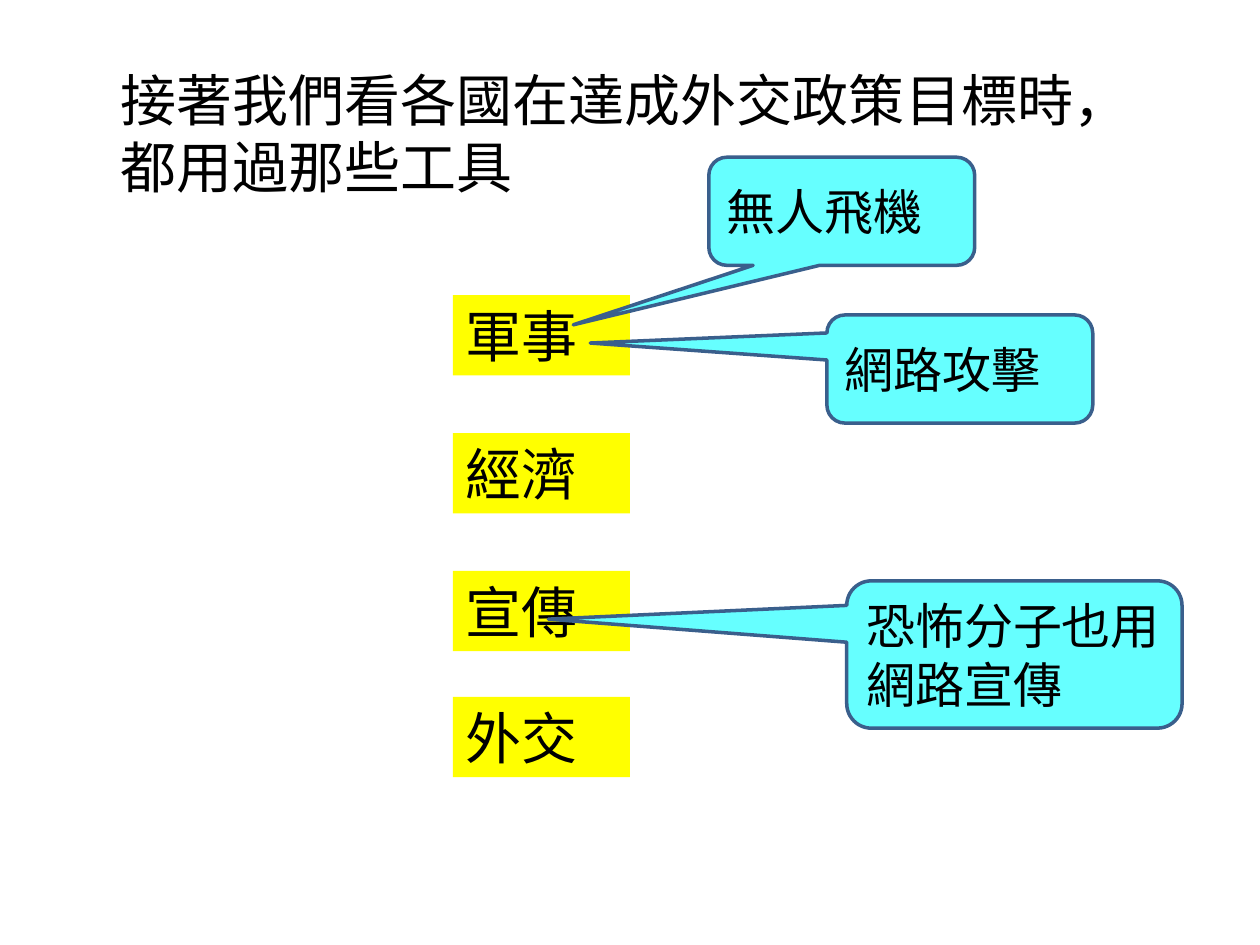
from lxml import etree
from pptx import Presentation
from pptx.dml.color import RGBColor
from pptx.enum.shapes import MSO_SHAPE
from pptx.enum.text import MSO_ANCHOR, MSO_AUTO_SIZE, PP_ALIGN
from pptx.oxml.ns import qn
from pptx.util import Cm, Pt

RECTANGLE = MSO_SHAPE.RECTANGLE
CALLOUT = MSO_SHAPE.ROUNDED_RECTANGULAR_CALLOUT
TOP = MSO_ANCHOR.TOP
MIDDLE = MSO_ANCHOR.MIDDLE
LEFT = PP_ALIGN.LEFT
NO_AUTOFIT = MSO_AUTO_SIZE.NONE

FONT = "Noto Sans CJK SC"
BLACK = RGBColor(0x00, 0x00, 0x00)
YELLOW = RGBColor(0xFF, 0xFF, 0x00)
CYAN = RGBColor(0x66, 0xFF, 0xFF)
BLUE = RGBColor(0x3A, 0x5F, 0x8C)


def write_text(shape, text, size, anchor):
    frame = shape.text_frame
    frame.word_wrap = True
    frame.auto_size = NO_AUTOFIT
    frame.vertical_anchor = anchor
    paragraph = frame.paragraphs[0]
    paragraph.alignment = LEFT
    run = paragraph.add_run()
    run.text = text
    run.font.size = Pt(size)
    run.font.color.rgb = BLACK
    run.font.name = FONT
    properties = run._r.get_or_add_rPr()
    etree.SubElement(properties, qn("a:ea")).set("typeface", FONT)


def add_box(kind, left, top, width, height, fill):
    shape = slide.shapes.add_shape(kind, Cm(left), Cm(top), Cm(width), Cm(height))
    shape.shadow.inherit = False
    shape.fill.solid()
    shape.fill.fore_color.rgb = fill
    return shape


presentation = Presentation()
presentation.slide_width = Cm(25.4)
presentation.slide_height = Cm(19.05)
slide = presentation.slides.add_slide(presentation.slide_layouts[5])

title = slide.shapes.title
title.left, title.top = Cm(2.18), Cm(1.19)
title.width, title.height = Cm(21.03), Cm(3)
write_text(title, "接著我們看各國在達成外交政策目標時，都用過那些工具", 32, TOP)

tools = [("軍事", 5.95), ("經濟", 8.73), ("宣傳", 11.51), ("外交", 14.05)]
for text, top in tools:
    tool = add_box(RECTANGLE, 9.13, top, 3.57, 1.62, YELLOW)
    tool.line.fill.background()
    write_text(tool, text, 32, TOP)

examples = [
    ("無人飛機", 14.29, 3.17, 5.36, 2.18, -1.01, 1.05),
    ("網路攻擊", 16.67, 6.35, 5.36, 2.18, -1.39, -0.24),
    ("恐怖分子也用網路宣傳", 17.07, 11.71, 6.76, 2.97, -1.39, -0.24),
]
for text, left, top, width, height, tip_x, tip_y in examples:
    callout = add_box(CALLOUT, left, top, width, height, CYAN)
    callout.adjustments[0] = tip_x
    callout.adjustments[1] = tip_y
    callout.line.color.rgb = BLUE
    callout.line.width = Pt(2)
    write_text(callout, text, 28, MIDDLE)

presentation.save("out.pptx")
